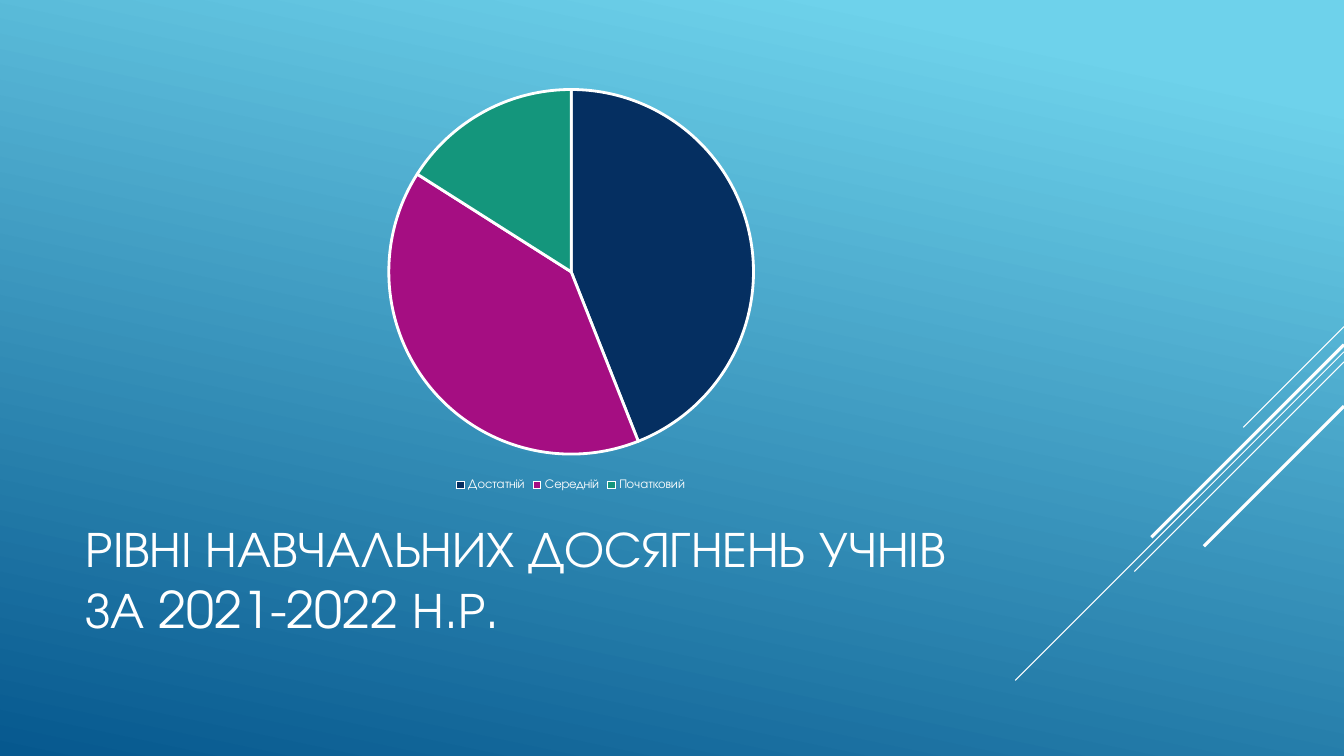
from lxml import etree
from pptx import Presentation
from pptx.chart.data import CategoryChartData
from pptx.dml.color import RGBColor
from pptx.enum.chart import XL_CHART_TYPE, XL_LEGEND_POSITION
from pptx.enum.shapes import MSO_CONNECTOR
from pptx.enum.text import MSO_ANCHOR, PP_ALIGN
from pptx.oxml.ns import qn
from pptx.util import Inches, Pt

FONT = "TeX Gyre Adventor"
COLORS = {
    "sky": "6ED2EB",
    "deep": "06588E",
    "white": "FFFFFF",
    "navy": "052F61",
    "magenta": "A50E82",
    "green": "14967C",
}
LEVELS = [
    ("Достатній", 44, "navy"),
    ("Середній", 40, "magenta"),
    ("Початковий", 16, "green"),
]
STRIPES = [
    (3.24, 1.0, 0.75),
    (3.49, 3.26, 0.75),
    (3.59, 2.08, 0.75),
    (3.42, 1.91, 2.25),
    (4.03, 1.39, 2.25),
]


def rgb(name):
    """Return the named colour."""
    return RGBColor.from_string(COLORS[name])


def style_font(font, size):
    """Apply the white slide font at the given size."""
    font.name = FONT
    font.size = Pt(size)
    font.color.rgb = rgb("white")


def add_background(s):
    """Fill the slide with the sloping blue gradient."""
    fill = s.background.fill
    fill.gradient()
    fill.gradient_angle = 258
    for stop, position, name in zip(fill.gradient_stops, (0.1, 1), ("sky", "deep")):
        stop.position = position
        stop.color.rgb = rgb(name)


def add_stripes(s, right):
    """Draw the 45 degree stripes running down from the right edge."""
    for top, reach, weight in STRIPES:
        line = s.shapes.add_connector(
            MSO_CONNECTOR.STRAIGHT,
            Inches(right), Inches(top), Inches(right - reach), Inches(top + reach),
        )
        line.line.color.rgb = rgb("white")
        line.line.width = Pt(weight)
        etree.SubElement(line._element.spPr, qn("a:effectLst"))


def add_title(s, left, top, width, height):
    """Place the title in its box."""
    sp = s.shapes.title
    sp.left, sp.top = Inches(left), Inches(top)
    sp.width, sp.height = Inches(width), Inches(height)
    tf = sp.text_frame
    tf.word_wrap = True
    tf.vertical_anchor = MSO_ANCHOR.MIDDLE
    p = tf.paragraphs[0]
    p.alignment = PP_ALIGN.LEFT
    r = p.add_run()
    r.text = "РІВНІ НАВЧАЛЬНИХ ДОСЯГНЕНЬ УЧНІВ ЗА 2021-2022 Н.Р."
    style_font(r.font, 36)


def add_levels_chart(s, left, top, width, height):
    """Place the pie of achievement levels with its legend below."""
    data = CategoryChartData()
    data.categories = [level for level, _, _ in LEVELS]
    data.add_series("Series 1", [value for _, value, _ in LEVELS])
    chart = s.shapes.add_chart(
        XL_CHART_TYPE.PIE,
        Inches(left), Inches(top), Inches(width), Inches(height), data,
    ).chart
    style_font(chart.font, 10)
    chart.has_title = False
    chart.has_legend = True
    chart.legend.position = XL_LEGEND_POSITION.BOTTOM
    chart.legend.include_in_layout = False
    style_font(chart.legend.font, 9)
    plot = chart.plots[0]
    plot.vary_by_categories = True
    for i, (_, _, name) in enumerate(LEVELS):
        form = plot.series[0].points[i].format
        form.fill.solid()
        form.fill.fore_color.rgb = rgb(name)
        form.line.color.rgb = rgb("white")
        form.line.width = Pt(2)


def main():
    """Build and save the slide."""
    prs = Presentation()
    prs.slide_width, prs.slide_height = Inches(13.33), Inches(7.5)
    s = prs.slides.add_slide(prs.slide_layouts[5])
    add_background(s)
    add_stripes(s, 13.33)
    add_title(s, 0.75, 4.91, 9.33, 1.65)
    add_levels_chart(s, 0.75, 0.75, 9.83, 4.16)
    prs.save("out.pptx")


if __name__ == "__main__":
    main()
